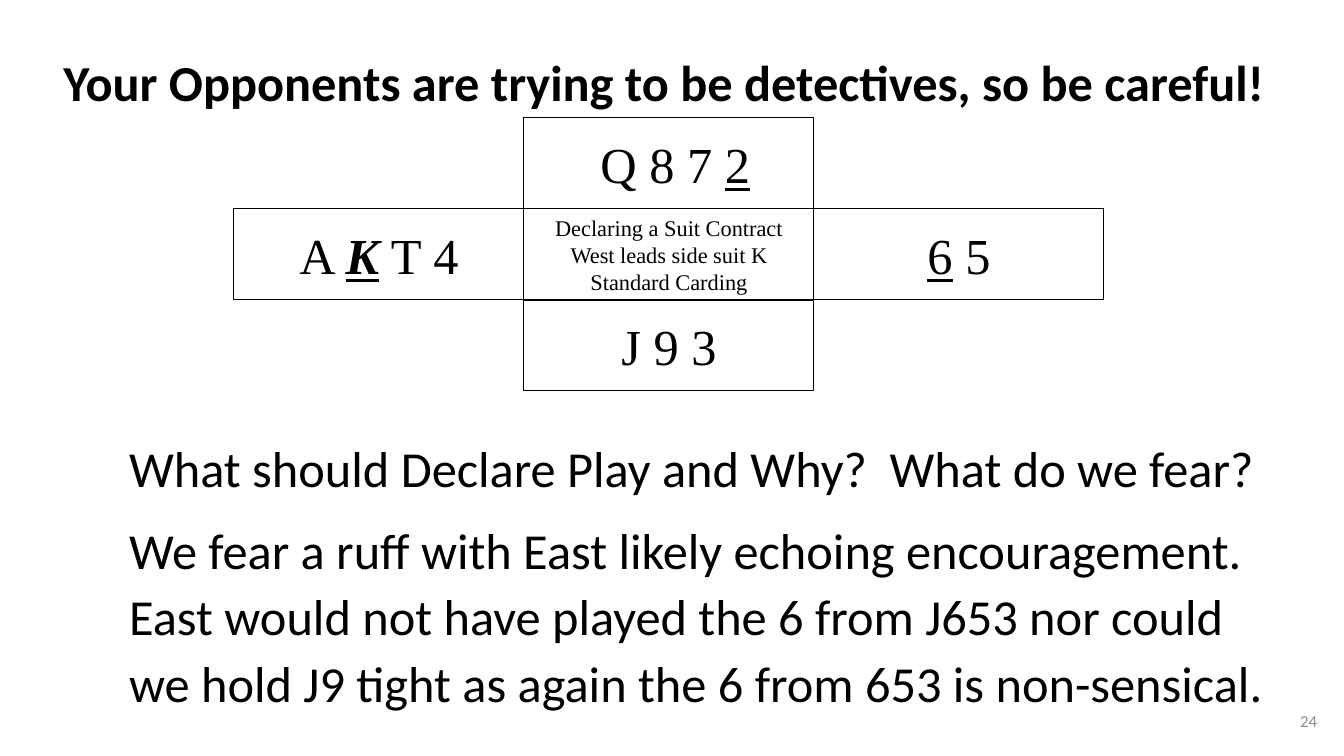
"""Build a bridge slide with a compass of card hands and a discussion."""
from pptx import Presentation, util as u
from pptx.dml.color import RGBColor
from pptx.enum import shapes, text

TITLE = "Your Opponents are trying to be detectives, so be careful! "
HANDS = [
    (1, 0, [(" Q 8 7 ", ""), ("2", "u")]),
    (0, 1, [("A ", ""), ("K", "biu"), (" T 4", "")]),
    (2, 1, [("6", "u"), (" 5", "")]),
    (1, 2, [("J 9 3", "")]),
]
NOTES = ["Declaring a Suit Contract", "West leads side suit K", "Standard Carding"]
BODY = [
    (426, 104, "What should Declare Play and Why?  What do we fear?"),
    (508, 213, "We fear a ruff with East likely echoing encouragement.  "
               "East would not have played the 6 from J653 nor could "
               "we hold J9 tight as again the 6 from 653 is non-sensical."),
]
PAGE = "24"

THEME = {
    "ink": "000000", "paper": "FFFFFF", "grey": "8C8C8C",
    "sans": "Calibri", "serif": "Times New Roman",
    "big": 36, "note": 16, "small": 12, "line": 0.75,
}
WIDE, HIGH = 1344, 756
SCALE = u.Inches(1) / 100.8
GRID = (234, 118)
STEP = (290, 91)
INDENT = 40
ALIGN = text.PP_ALIGN


def px(*vals):
    return [u.Emu(round(v * SCALE)) for v in vals]


def color(key):
    return RGBColor.from_string(THEME[key])


def style(para, face, size, ink="ink", align=ALIGN.CENTER, bold=False):
    font = para.font
    font.name, font.size, font.bold = THEME[face], u.Pt(THEME[size]), bold
    font.color.rgb = color(ink)
    para.alignment = align


def label(slide, box, words, size="big", **look):
    frame = slide.shapes.add_textbox(*px(*box)).text_frame
    frame.word_wrap = True
    para = frame.paragraphs[0]
    para.text = words
    style(para, "sans", size, **look)
    return frame


def cell(slide, col, row, lines, size):
    left, top = GRID[0] + col * STEP[0], GRID[1] + row * STEP[1]
    shape = slide.shapes.add_shape(
        shapes.MSO_SHAPE.RECTANGLE, *px(left, top, *STEP))
    shape.shadow.inherit = False
    shape.fill.solid()
    shape.fill.fore_color.rgb = color("paper")
    shape.line.color.rgb = color("ink")
    shape.line.width = u.Pt(THEME["line"])
    frame = shape.text_frame
    frame.vertical_anchor = text.MSO_ANCHOR.MIDDLE
    for i, runs in enumerate(lines):
        para = frame.add_paragraph() if i else frame.paragraphs[0]
        style(para, "serif", size)
        for words, marks in runs:
            run = para.add_run()
            run.text = words
            if marks:
                run.font.bold = "b" in marks
                run.font.italic = "i" in marks
                run.font.underline = "u" in marks


def main():
    deck = Presentation()
    deck.slide_width, deck.slide_height = px(WIDE, HIGH)
    slide = deck.slides.add_slide(deck.slide_layouts[6])
    for col, row, runs in HANDS:
        cell(slide, col, row, [runs], "big")
    cell(slide, 1, 1, [[(line, "")] for line in NOTES], "note")
    label(slide, (15, 46, 1310, 73), TITLE, bold=True)
    for top, height, words in BODY:
        frame = label(slide, (79, top, 1200, height), words, align=ALIGN.LEFT)
        para = frame.paragraphs[0]
        para.line_spacing, para.space_after = 1.1, u.Pt(8)
        frame.margin_left += px(INDENT)[0]
    page = label(slide, (1025, 701, 302, 40), PAGE, "small",
                 ink="grey", align=ALIGN.RIGHT)
    page.vertical_anchor = text.MSO_ANCHOR.MIDDLE
    deck.save("out.pptx")


if __name__ == "__main__":
    main()
